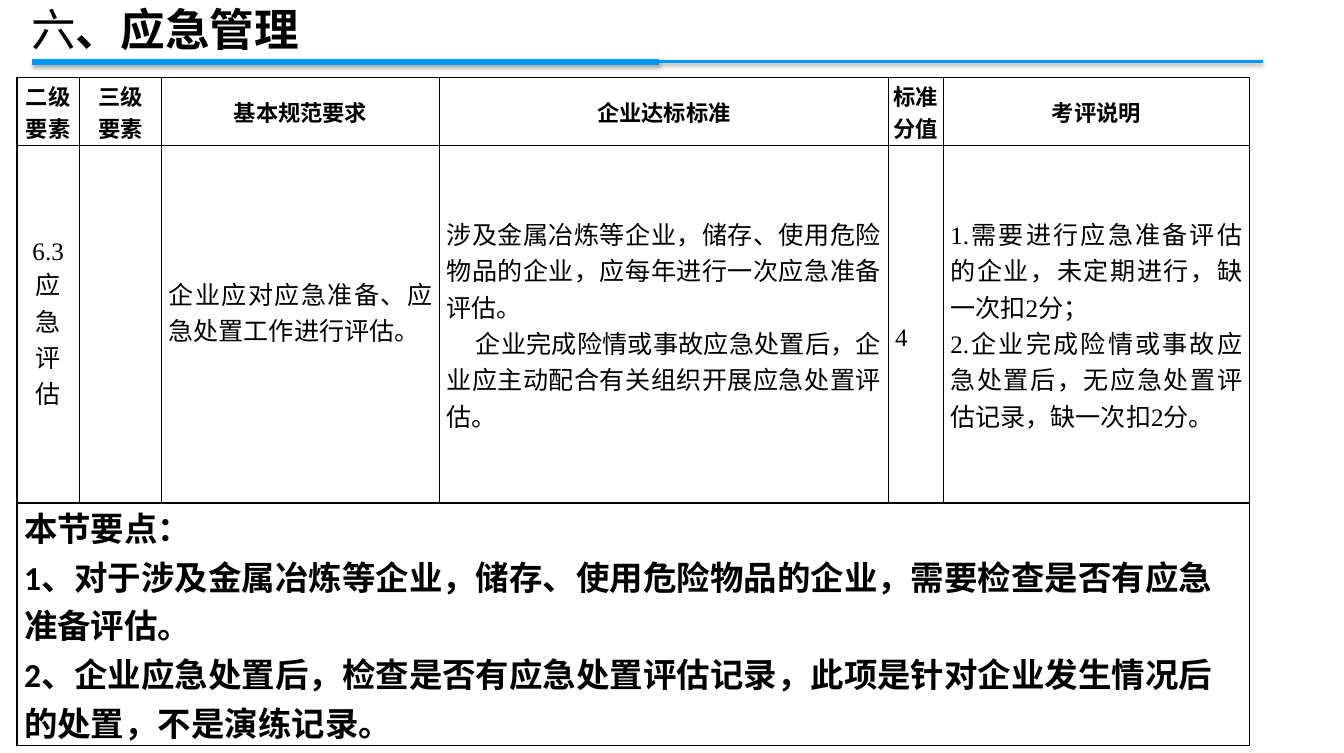
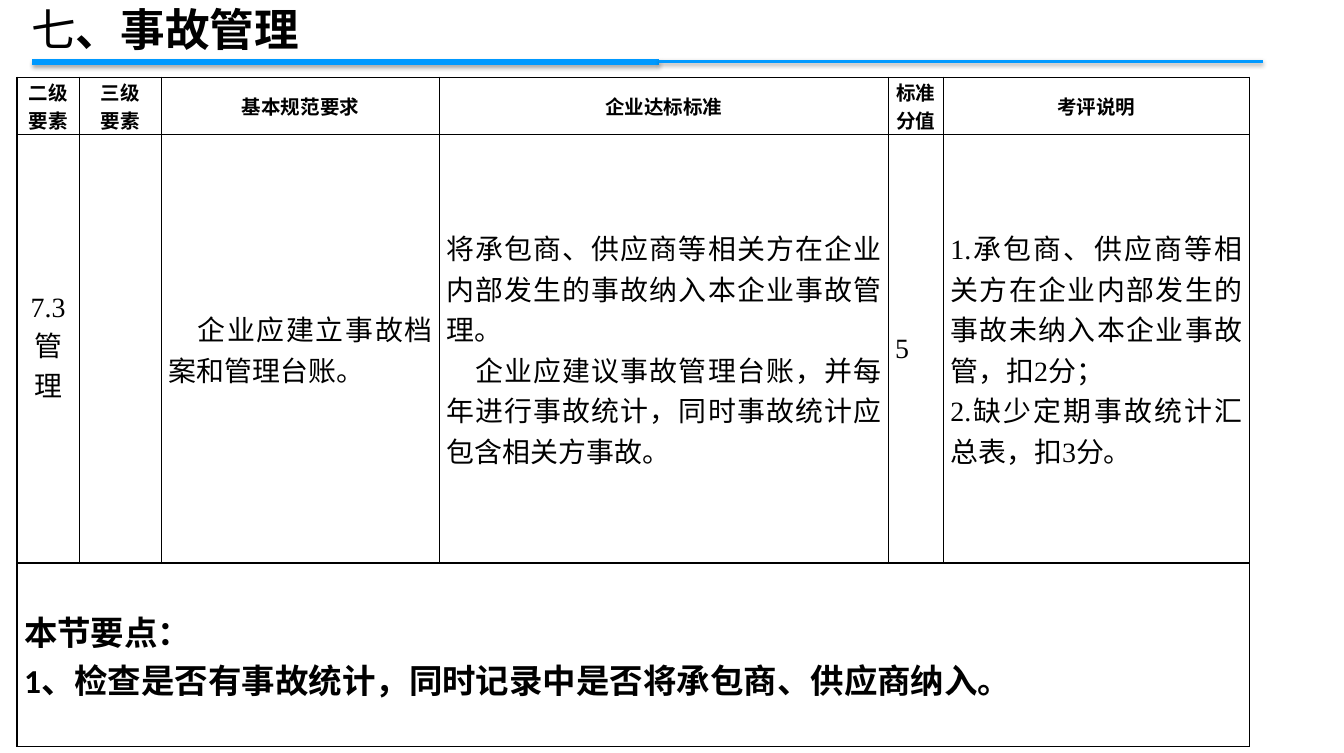
"""Build two review slides, each a titled table of safety criteria."""
from lxml.etree import SubElement
from pptx import Presentation
from pptx.dml.color import RGBColor
from pptx.enum.shapes import MSO_CONNECTOR
from pptx.enum.text import MSO_ANCHOR, PP_ALIGN
from pptx.oxml import parse_xml
from pptx.oxml.ns import nsdecls, qn
from pptx.util import Inches, Pt

BLUE = RGBColor(0x00, 0x99, 0xFF)
BLACK = RGBColor(0x00, 0x00, 0x00)
SERIF, SANS, HAN = "Times New Roman", "Calibri", "Noto Sans CJK SC"
INDENT = Inches(0.29)

RULES = [(0.32, 6.57, 0.62, 4, 35, 1.8), (6.57, 12.58, 0.61, 2, 38, 1.6)]
HEADS = [["二级", "要素"], ["三级", "要素"], ["基本规范要求"],
         ["企业达标标准"], ["标准", "分值"], ["考评说明"]]
COLS = [0.62, 0.82, 2.77, 4.47, 0.55, 3.05]
ALIGNS = [PP_ALIGN.CENTER] * 2 + [PP_ALIGN.JUSTIFY] * 4

SLIDES = [
    {
        "title": ("六", "、应急管理"),
        "rows": [0.68, 3.56, 2.2],
        "sizes": (16, 18),
        "body": [
            ["6.3应急评估"],
            [],
            ["企业应对应急准备、应急处置工作进行评估。"],
            ["涉及金属冶炼等企业，储存、使用危险物品的企业，应每年进行一次应急准备评估。",
             "企业完成险情或事故应急处置后，企业应主动配合有关组织开展应急处置评估。"],
            ["4"],
            ["1.需要进行应急准备评估的企业，未定期进行，缺一次扣2分；",
             "2.企业完成险情或事故应急处置后，无应急处置评估记录，缺一次扣2分。"],
        ],
        "indents": {(3, 1)},
        "pads": {2: (0, 0.25), 4: (0.27, 0)},
        "notes": [
            "本节要点：",
            "1、对于涉及金属冶炼等企业，储存、使用危险物品的企业，需要检查是否有应急准备评估。",
            "2、企业应急处置后，检查是否有应急处置评估记录，此项是针对企业发生情况后的处置，不是演练记录。",
        ],
    },
    {
        "title": ("七", "、事故管理"),
        "rows": [0.56, 4.27, 1.83],
        "sizes": (14, 20),
        "body": [
            ["7.3管理"],
            [],
            ["企业应建立事故档案和管理台账。"],
            ["将承包商、供应商等相关方在企业内部发生的事故纳入本企业事故管理。",
             "企业应建议事故管理台账，并每年进行事故统计，同时事故统计应包含相关方事故。"],
            ["5"],
            ["1.承包商、供应商等相关方在企业内部发生的事故未纳入本企业事故管，扣2分；",
             "2.缺少定期事故统计汇总表，扣3分。"],
        ],
        "indents": {(2, 0), (3, 1)},
        "pads": {},
        "notes": ["本节要点：",
                  "1、检查是否有事故统计，同时记录中是否将承包商、供应商纳入。"],
    },
]


def add_run(para, text, size, face, bold=False):
    run = para.add_run()
    run.text = text
    font = run.font
    font.size, font.name, font.bold = Pt(size), face, bold
    font.color.rgb = BLACK
    SubElement(run._r.get_or_add_rPr(), qn("a:ea")).set("typeface", HAN)


def add_rule(slide, left, right, top, width, alpha, dist):
    line = slide.shapes.add_connector(
        MSO_CONNECTOR.STRAIGHT, Inches(left), Inches(top), Inches(right), Inches(top))
    line.line.color.rgb = BLUE
    line.line.width = Pt(width)
    line._element.spPr.append(parse_xml(
        f'<a:effectLst {nsdecls("a")}><a:outerShdw blurRad="{Pt(3.1)}" '
        f'dist="{Pt(dist)}" dir="5400000" rotWithShape="0"><a:srgbClr val="000000">'
        f'<a:alpha val="{alpha * 1000}"/></a:srgbClr></a:outerShdw></a:effectLst>'))


def add_title(slide, parts):
    box = slide.shapes.add_textbox(Inches(0.07), Inches(-0.03), Inches(3.15), Inches(0.64))
    box.text_frame.word_wrap = True
    para = box.text_frame.paragraphs[0]
    para.alignment = PP_ALIGN.CENTER
    for part, bold in zip(parts, (False, True)):
        add_run(para, part, 32, HAN, bold)


def style_cell(cell, side, pads=(0, 0)):
    cell.fill.background()
    cell.vertical_anchor = MSO_ANCHOR.MIDDLE
    cell.margin_left = cell.margin_right = Inches(side)
    cell.margin_top, cell.margin_bottom = map(Inches, pads)
    props = cell._tc.get_or_add_tcPr()
    for spot, edge in enumerate(("lnL", "lnR", "lnT", "lnB")):
        props.insert(spot, parse_xml(
            f'<a:{edge} {nsdecls("a")} w="{Pt(1)}"><a:solidFill>'
            f'<a:srgbClr val="{BLACK}"/></a:solidFill></a:{edge}>'))


def fill_cell(cell, lines, size, face, bold, align, indents=()):
    frame = cell.text_frame
    for spot, text in enumerate(lines):
        para = frame.add_paragraph() if spot else frame.paragraphs[0]
        para.alignment = align
        if spot in indents:
            para._p.get_or_add_pPr().set("indent", str(INDENT))
        add_run(para, text, size, face, bold)


def add_grid(slide, data):
    rows = data["rows"]
    grid = slide.shapes.add_table(
        len(rows), len(COLS), Inches(0.17), Inches(0.77),
        Inches(sum(COLS)), Inches(sum(rows))).table
    grid.first_row = grid.horz_banding = False
    for row, height in zip(grid.rows, rows):
        row.height = Inches(height)
    small, large = data["sizes"]
    for col, width in enumerate(COLS):
        grid.columns[col].width = Inches(width)
        head, body, note = (grid.cell(row, col) for row in range(3))
        style_cell(head, 0.04)
        style_cell(body, 0.07, data["pads"].get(col, (0, 0)))
        style_cell(note, 0.07)
        fill_cell(head, HEADS[col], small, SERIF, True, PP_ALIGN.CENTER)
        indents = [spot for at, spot in data["indents"] if at == col]
        fill_cell(body, data["body"][col], large, SERIF, False, ALIGNS[col], indents)
    first = grid.cell(2, 0)
    first.merge(grid.cell(2, len(COLS) - 1))
    fill_cell(first, data["notes"], 24, SANS, True, PP_ALIGN.LEFT)


def main():
    deck = Presentation()
    deck.slide_width, deck.slide_height = Inches(13.39), Inches(7.5)
    for data in SLIDES:
        slide = deck.slides.add_slide(deck.slide_layouts[6])
        for rule in RULES:
            add_rule(slide, *rule)
        add_grid(slide, data)
        add_title(slide, data["title"])
    deck.save("out.pptx")


if __name__ == "__main__":
    main()
